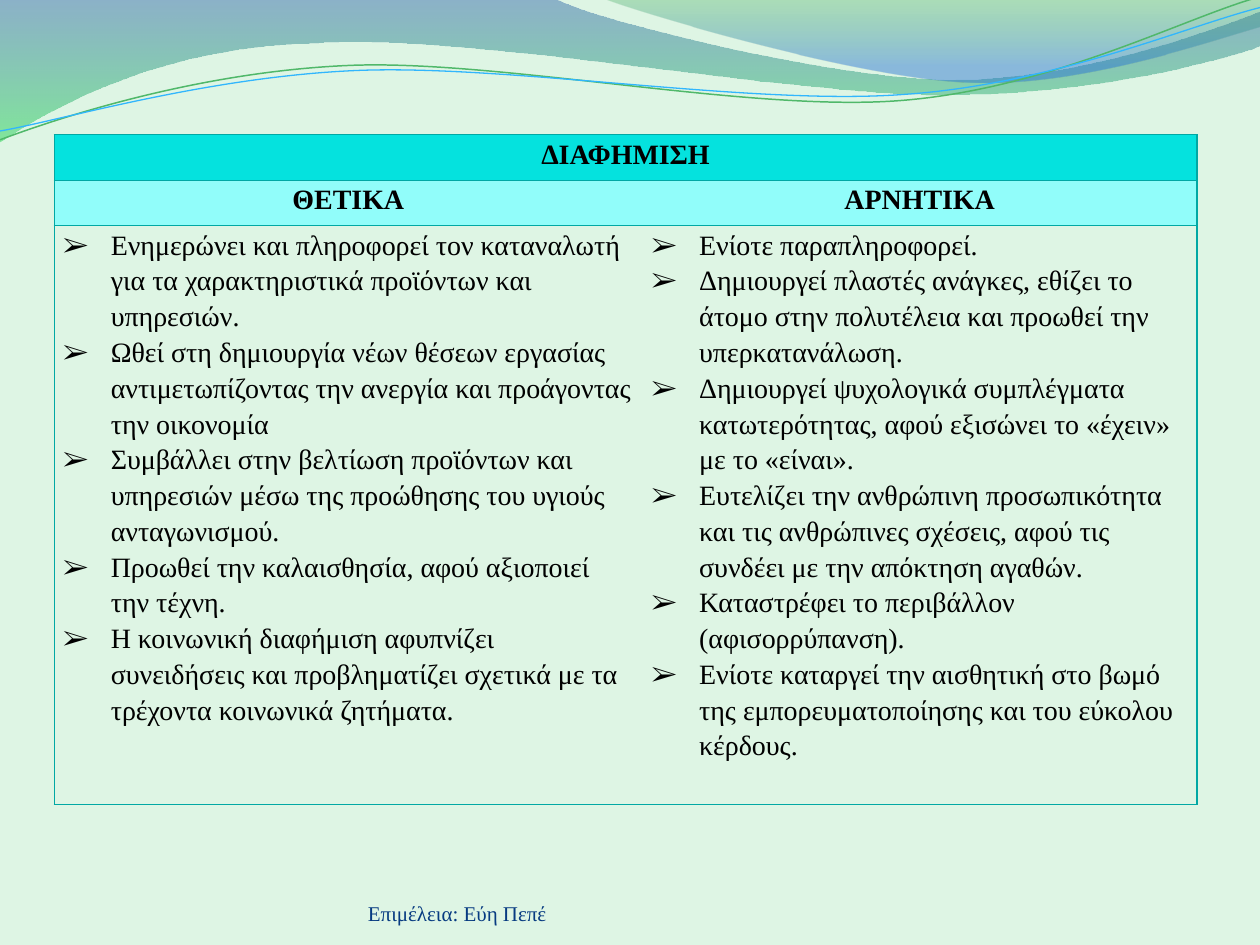
from lxml import etree
from pptx import Presentation
from pptx.dml.color import RGBColor
from pptx.enum.text import MSO_ANCHOR, PP_ALIGN
from pptx.oxml.ns import qn
from pptx.util import Inches, Pt

CENTER = PP_ALIGN.CENTER
LEFT = PP_ALIGN.LEFT
BOTTOM = MSO_ANCHOR.BOTTOM
FONT = "Times New Roman"
BORDER = "01A8A4"

# Wave outlines: a pair is a straight segment, six numbers are a Bézier curve
LEFT_WAVE = [
    (0, 0), (4.4, -0.01), (4.76, 0.17, 6.64, 0.63, 7.58, 0.63),
    (8.53, 0.63, 9.58, 0.26, 10, 0.09), (10.01, 0.36),
    (9.83, 0.44, 8.7, 0.76, 7.46, 0.75), (6.22, 0.75, 3.82, 0.28, 2.57, 0.34),
    (1.29, 0.36, 0.46, 0.83, -0.01, 1.13), (0, 0),
]
RIGHT_WAVE = [
    (4.79, -0.01), (5.09, 0.11, 6.82, 0.62, 7.69, 0.65),
    (8.56, 0.69, 9.61, 0.32, 10, 0.21), (10, 0), (4.79, -0.01),
]
GREEN_LINE = [
    (0, 1.11), (0.48, 0.93, 1.58, 0.57, 2.77, 0.52),
    (3.95, 0.47, 5.93, 0.89, 7.13, 0.8), (8.33, 0.71, 9.38, 0.15, 9.98, -0.02),
]
BLUE_LINE = [
    (0, 1.04), (0.47, 0.96, 1.64, 0.61, 2.83, 0.56),
    (4.03, 0.51, 5.97, 0.84, 7.17, 0.75), (8.36, 0.67, 9.41, 0.21, 10, 0.06),
]

POSITIVES = [
    "Ενημερώνει και πληροφορεί τον καταναλωτή για τα χαρακτηριστικά προϊόντων και υπηρεσιών.",
    "Ωθεί στη δημιουργία νέων θέσεων εργασίας αντιμετωπίζοντας την ανεργία και προάγοντας την οικονομία",
    "Συμβάλλει στην βελτίωση προϊόντων και υπηρεσιών μέσω της προώθησης του υγιούς ανταγωνισμού.",
    "Προωθεί την καλαισθησία, αφού αξιοποιεί την τέχνη.",
    "Η κοινωνική διαφήμιση αφυπνίζει συνειδήσεις και προβληματίζει σχετικά με τα τρέχοντα κοινωνικά ζητήματα.",
]
NEGATIVES = [
    "Ενίοτε παραπληροφορεί.",
    "Δημιουργεί πλαστές ανάγκες, εθίζει το άτομο στην πολυτέλεια και προωθεί την υπερκατανάλωση.",
    "Δημιουργεί ψυχολογικά συμπλέγματα κατωτερότητας, αφού εξισώνει το «έχειν» με το «είναι».",
    "Ευτελίζει την ανθρώπινη προσωπικότητα και τις ανθρώπινες σχέσεις, αφού τις συνδέει με την απόκτηση αγαθών.",
    "Καταστρέφει το περιβάλλον (αφισορρύπανση).",
    "Ενίοτε καταργεί την αισθητική στο βωμό της εμπορευματοποίησης και του εύκολου κέρδους.",
]


def color(hex_value):
    return RGBColor.from_string(hex_value)


def add_element(parent, tag, **attributes):
    values = {name: str(value) for name, value in attributes.items()}
    return etree.SubElement(parent, qn(tag), values)


def add_outline(slide, segments, close):
    """Build the outline through its corner points, then bend the curved parts."""
    corners = [(Inches(x), Inches(y)) for *_, x, y in segments]
    builder = slide.shapes.build_freeform(*corners[0], scale=1.0)
    builder.add_line_segments(corners[1:], close=close)
    shape = builder.convert_to_shape()
    shape.shadow.inherit = False
    straight_parts = list(shape.element.iter(qn("a:lnTo")))
    for part, segment in zip(straight_parts, segments[1:]):
        if len(segment) == 6:
            curve = etree.Element(qn("a:cubicBezTo"))
            for x, y in zip(segment[::2], segment[1::2]):
                add_element(curve, "a:pt", x=Inches(x) - shape.left, y=Inches(y) - shape.top)
            part.getparent().replace(part, curve)
    return shape


def add_wave(slide, segments, stops):
    """Filled wave; each stop is position, colour and opacity in percent."""
    shape = add_outline(slide, segments, True)
    shape.line.fill.background()
    shape.fill.gradient()
    gradient = shape.element.spPr.find(qn("a:gradFill"))
    for child in list(gradient):
        gradient.remove(child)
    stop_list = add_element(gradient, "a:gsLst")
    for position, hex_value, opacity in stops:
        stop = add_element(stop_list, "a:gs", pos=position * 1000)
        stop_color = add_element(stop, "a:srgbClr", val=hex_value)
        add_element(stop_color, "a:alpha", val=opacity * 1000)
    add_element(gradient, "a:lin", ang=90 * 60000, scaled=0)


def add_wave_line(slide, segments, hex_value, width):
    shape = add_outline(slide, segments, False)
    shape.fill.background()
    shape.line.color.rgb = color(hex_value)
    shape.line.width = Pt(width)


def add_run(paragraph, text, size, hex_value, bold=False):
    run = paragraph.add_run()
    run.text = text
    run.font.name = FONT
    run.font.size = Pt(size)
    run.font.bold = bold
    run.font.color.rgb = color(hex_value)


def add_bullet(paragraph):
    properties = paragraph._p.get_or_add_pPr()
    properties.set("marL", str(Inches(0.38)))
    properties.set("indent", str(-Inches(0.38)))
    add_element(properties, "a:buFont", typeface=FONT)
    add_element(properties, "a:buChar", char="➢")


def set_borders(cell, sides):
    """Draw the named sides (L, R, T, B) and clear the others."""
    properties = cell._tc.get_or_add_tcPr()
    for index, side in enumerate("LRTB"):
        line = etree.Element(qn(f"a:ln{side}"), w=str(Pt(0.75)))
        if side in sides:
            add_element(add_element(line, "a:solidFill"), "a:srgbClr", val=BORDER)
        else:
            add_element(line, "a:noFill")
        properties.insert(index, line)


def fill_cell(cell, texts, sides, fill=None, heading=False):
    cell.margin_left = cell.margin_right = Inches(0.07)
    cell.margin_top = cell.margin_bottom = 0
    if fill:
        cell.fill.solid()
        cell.fill.fore_color.rgb = color(fill)
    else:
        cell.fill.background()
    set_borders(cell, sides)
    frame = cell.text_frame
    for index, text in enumerate(texts):
        paragraph = frame.add_paragraph() if index else frame.paragraphs[0]
        paragraph.alignment = CENTER if heading else LEFT
        paragraph.line_spacing = 1.15
        if not heading:
            add_bullet(paragraph)
        add_run(paragraph, text, 16, "000000", heading)


def add_comparison_table(slide):
    table = slide.shapes.add_table(
        3, 2, Inches(0.43), Inches(1.07), Inches(9.07), Inches(4.97)).table
    for column, width in zip(table.columns, (4.67, 4.4)):
        column.width = Inches(width)
    for row, height in zip(table.rows, (0.36, 0.36, 4.25)):
        row.height = Inches(height)

    title = table.cell(0, 0)
    title.merge(table.cell(0, 1))
    fill_cell(title, ["ΔΙΑΦΗΜΙΣΗ"], "LRTB", "05E2DE", True)
    set_borders(table.cell(0, 1), "RTB")

    columns = [("ΘΕΤΙΚΑ", POSITIVES, "L"), ("ΑΡΝΗΤΙΚΑ", NEGATIVES, "R")]
    for index, (heading, points, side) in enumerate(columns):
        fill_cell(table.cell(1, index), [heading], side + "TB", "91FDFA", True)
        fill_cell(table.cell(2, index), points, side + "TB")


def add_credit(slide):
    box = slide.shapes.add_textbox(Inches(2.92), Inches(6.95), Inches(3.67), Inches(0.4))
    frame = box.text_frame
    frame.word_wrap = True
    frame.vertical_anchor = BOTTOM
    frame.margin_left = frame.margin_right = frame.margin_top = frame.margin_bottom = 0
    add_run(frame.paragraphs[0], "Επιμέλεια: Εύη Πεπέ", 12, "073B81")


def main():
    presentation = Presentation()
    presentation.slide_width = Inches(10)
    presentation.slide_height = Inches(7.5)
    slide = presentation.slides.add_slide(presentation.slide_layouts[6])
    slide.background.fill.solid()
    slide.background.fill.fore_color.rgb = color("DEF5E4")

    # Decorative waves along the top
    add_wave(slide, LEFT_WAVE, [(0, "2960A7", 45), (100, "35DA5E", 55)])
    add_wave(slide, RIGHT_WAVE, [(0, "36A752", 30), (80, "2472D3", 45)])
    add_wave_line(slide, GREEN_LINE, "50B86A", 0.85)
    add_wave_line(slide, BLUE_LINE, "31B6FD", 0.75)

    # Content
    add_credit(slide)
    add_comparison_table(slide)
    presentation.save("out.pptx")


if __name__ == "__main__":
    main()
